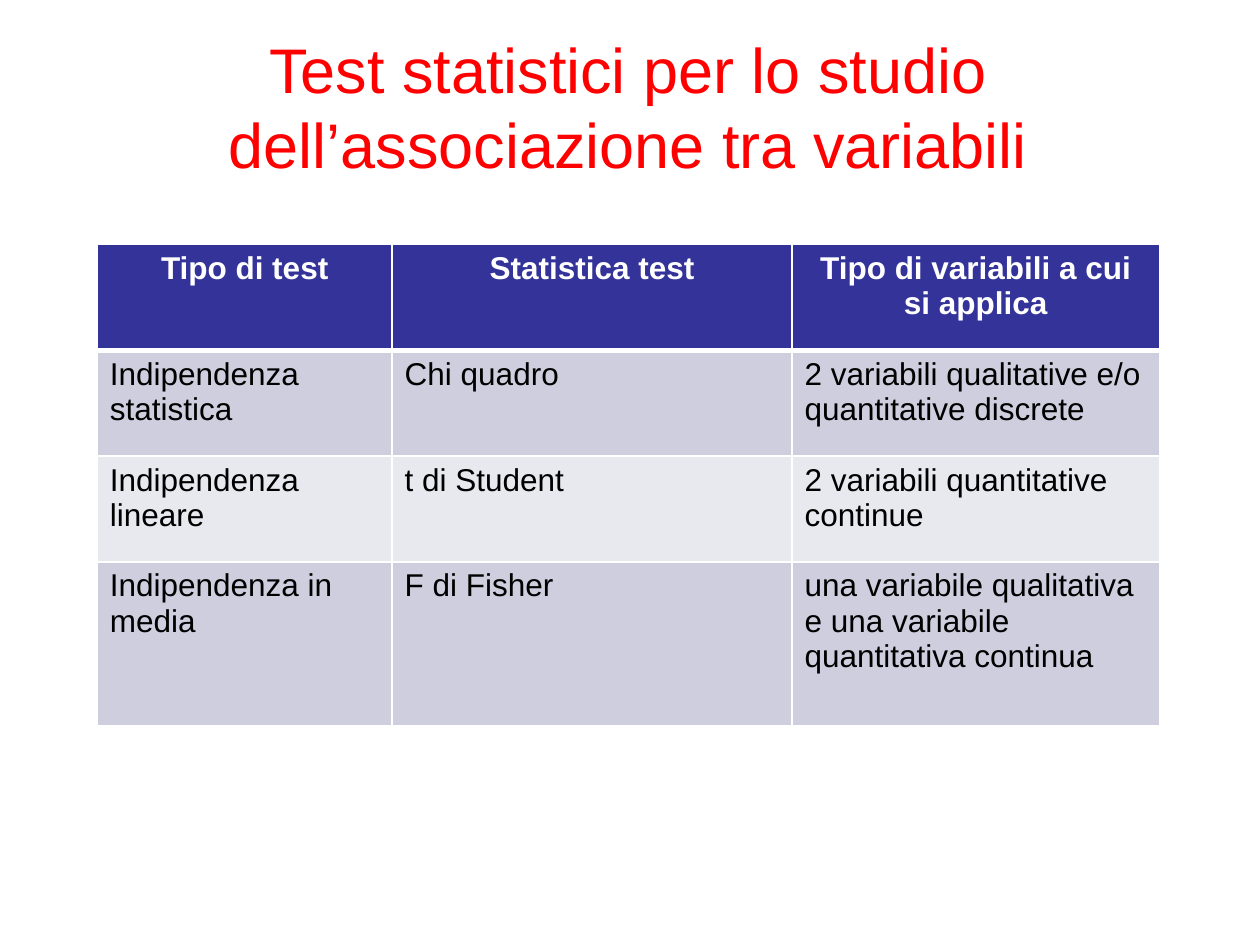
from lxml import etree
from pptx import Presentation
from pptx.dml.color import RGBColor
from pptx.enum.text import MSO_ANCHOR, PP_ALIGN
from pptx.oxml.ns import qn
from pptx.util import Pt

CENTER, LEFT = PP_ALIGN.CENTER, PP_ALIGN.LEFT
MIDDLE = MSO_ANCHOR.MIDDLE
TITLE_ONLY = 5

FONT = "Arial"
WHITE, BLACK, RED = "FFFFFF", "000000", "FF0000"
HEADER_FILL, BAND_FILLS = "333399", ("CECEDE", "E8E8EF")

TITLE = "Test statistici per lo studio dell’associazione tra variabili"
ROWS = [
    ("Tipo di test", "Statistica test", "Tipo di variabili a cui si applica"),
    ("Indipendenza statistica", "Chi quadro",
     "2 variabili qualitative e/o quantitative discrete"),
    ("Indipendenza lineare", "t di Student",
     "2 variabili quantitative continue"),
    ("Indipendenza in media", "F di Fisher",
     "una variabile qualitativa e una variabile quantitativa continua"),
]
COL_WIDTHS = (168.5, 228.5, 210)
ROW_HEIGHTS = (60.5, 60.5, 60.5, 93.5)


def rgb(color):
    return RGBColor.from_string(color)


def format_paragraph(p, size, color, align, bold=False):
    p.alignment = align
    font = p.font
    font.name, font.size, font.bold = FONT, Pt(size), bold
    font.color.rgb = rgb(color)


def set_borders(cell, color, **widths):
    """Draw the cell's borders; widths are keyed L, R, T, B, in that order."""
    tc_pr = cell._tc.get_or_add_tcPr()
    for side, width in widths.items():
        ln = etree.SubElement(tc_pr, qn(f"a:ln{side}"), w=str(Pt(width)))
        fill = etree.SubElement(ln, qn("a:solidFill"))
        etree.SubElement(fill, qn("a:srgbClr"), val=color)


def add_title(slide, left, top, width, height):
    title = slide.shapes.title
    title.left, title.top = Pt(left), Pt(top)
    title.width, title.height = Pt(width), Pt(height)
    tf = title.text_frame
    tf.text = TITLE
    tf.word_wrap = True
    tf.vertical_anchor = MIDDLE
    format_paragraph(tf.paragraphs[0], 36, RED, CENTER)


def add_test_table(slide, left, top):
    frame = slide.shapes.add_table(
        len(ROWS), len(COL_WIDTHS), Pt(left), Pt(top),
        Pt(sum(COL_WIDTHS)), Pt(sum(ROW_HEIGHTS)))
    table = frame.table
    for column, width in zip(table.columns, COL_WIDTHS):
        column.width = Pt(width)
    for i, (row, height, texts) in enumerate(zip(table.rows, ROW_HEIGHTS, ROWS)):
        row.height = Pt(height)
        header = i == 0
        fill = HEADER_FILL if header else BAND_FILLS[(i - 1) % 2]
        for cell, text in zip(row.cells, texts):
            cell.text = text
            format_paragraph(cell.text_frame.paragraphs[0], 18,
                             WHITE if header else BLACK,
                             CENTER if header else LEFT, bold=header)
            set_borders(cell, WHITE, L=1, R=1,
                        T=3 if i == 1 else 1, B=3 if header else 1)
            cell.fill.solid()
            cell.fill.fore_color.rgb = rgb(fill)


def main():
    prs = Presentation()
    prs.slide_width, prs.slide_height = Pt(720), Pt(540)
    slide = prs.slides.add_slide(prs.slide_layouts[TITLE_ONLY])
    add_title(slide, 7.2, 26.6, 703.4, 67.7)
    add_test_table(slide, 55.6, 139.7)
    prs.save("out.pptx")


if __name__ == "__main__":
    main()
